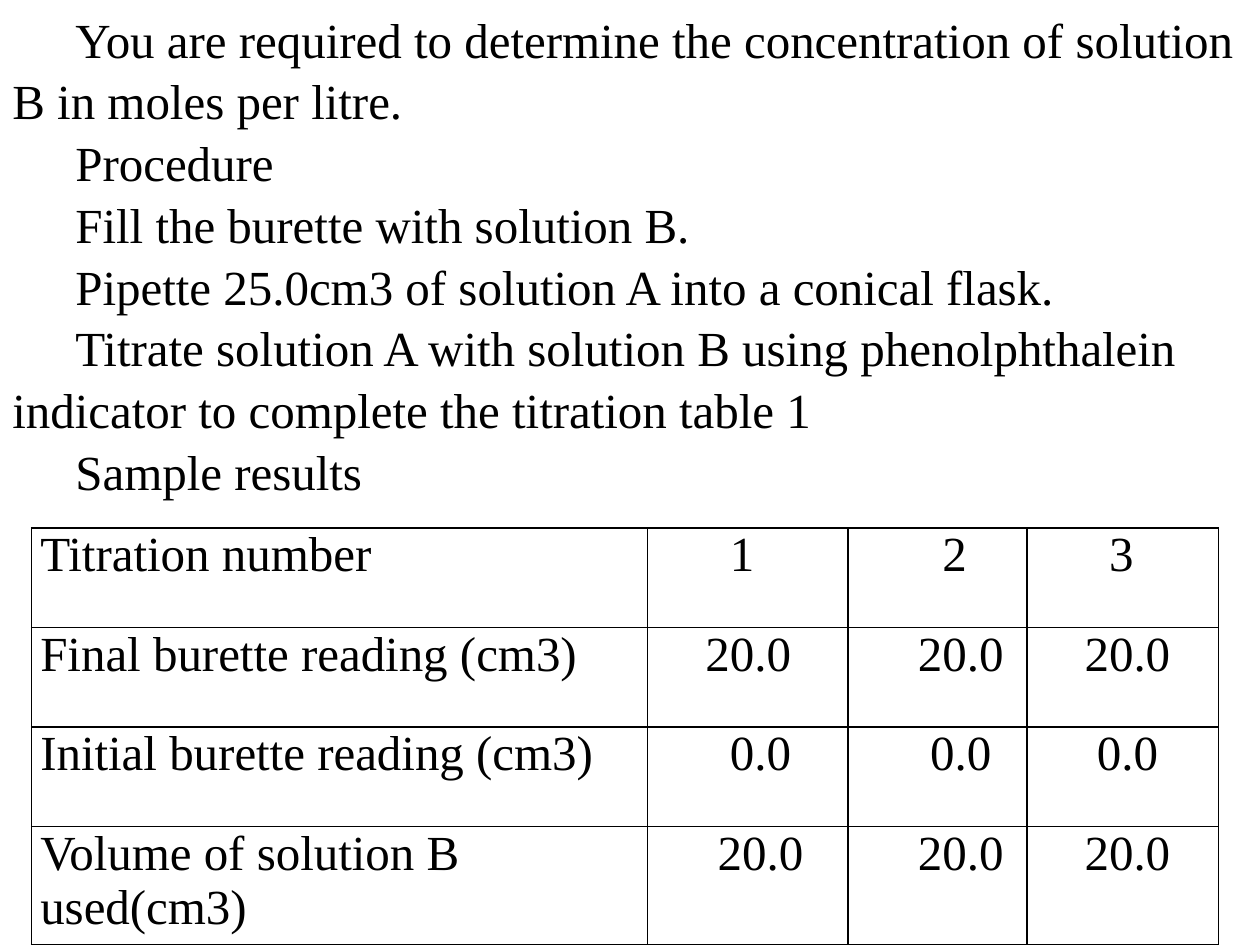
from pptx import Presentation, util as u
from pptx.dml.color import RGBColor
from pptx.enum import text
from pptx.oxml import parse_xml
from pptx.oxml.ns import nsdecls

BLACK = RGBColor(0, 0, 0)
WHITE = RGBColor(255, 255, 255)
FONT = {"name": "Times New Roman", "size": u.Pt(28), "bold": False}
SPACE = u.Pt(7)
CELL = {"margin_left": u.Inches(0.07), "margin_right": u.Inches(0.07),
        "margin_top": 0, "margin_bottom": 0,
        "vertical_anchor": text.MSO_ANCHOR.TOP}
BLANK_LAYOUT = 6
COLUMNS = (4.89, 1.59, 1.42, 1.52)
ROWS = (0.79, 0.79, 0.79, 0.94)
INSTRUCTIONS = (
    "You are required to determine the concentration of solution B in moles per litre.",
    "Procedure",
    "Fill the burette with solution B.",
    "Pipette 25.0cm3 of solution A into a conical flask.",
    "Titrate solution A with solution B using phenolphthalein indicator "
    "to complete the titration table 1",
    "Sample results",
)
READINGS = (
    ("Titration number", "1", "2", "3"),
    ("Final burette reading (cm3)", "20.0", "20.0", "20.0"),
    ("Initial burette reading (cm3)", "0.0", "0.0", "0.0"),
    ("Volume of solution B used(cm3)", "20.0", "20.0", "20.0"),
)
INDENTS = ((0, 6, 7, 6), (0, 4, 5, 4), (0, 6, 6, 5), (0, 5, 5, 4))


def apply(target, values):
    """Set each attribute of the target from a dict."""
    for name, value in values.items():
        setattr(target, name, value)


def write(paragraph, words, left=0, first=0):
    """Fill a paragraph with styled words and its indents."""
    properties = paragraph._p.get_or_add_pPr()
    properties.set("marL", str(int(left)))
    properties.set("indent", str(int(first)))
    run = paragraph.add_run()
    run.text = words
    apply(run.font, FONT)
    run.font.color.rgb = BLACK


def add_borders(cell):
    """Draw a thin black line on all four sides of a cell."""
    properties = cell._tc.get_or_add_tcPr()
    for position, side in enumerate(("lnL", "lnR", "lnT", "lnB")):
        properties.insert(position, parse_xml(
            f'<a:{side} {nsdecls("a")} w="{u.Pt(1)}"><a:solidFill>'
            f'<a:srgbClr val="{BLACK}"/></a:solidFill></a:{side}>'))


def add_instructions(slide, box):
    """Place the procedure text in the box."""
    frame = slide.shapes.add_textbox(*box).text_frame
    apply(frame, {"word_wrap": True, "vertical_anchor": text.MSO_ANCHOR.TOP})
    for number, words in enumerate(INSTRUCTIONS):
        paragraph = frame.add_paragraph() if number else frame.paragraphs[0]
        write(paragraph, words, first=u.Inches(0.5))
        paragraph.line_spacing = 1.05


def add_readings(slide, box):
    """Place the titration table in the box, sharing out its width and height."""
    left, top, width, height = box
    table = slide.shapes.add_table(len(ROWS), len(COLUMNS), *box).table
    apply(table, {"first_row": False, "horz_banding": False})
    for column, share in zip(table.columns, COLUMNS):
        column.width = int(width * share / sum(COLUMNS))
    for row, share in zip(table.rows, ROWS):
        row.height = int(height * share / sum(ROWS))
    for row, values, indents in zip(table.rows, READINGS, INDENTS):
        for cell, words, spaces in zip(row.cells, values, indents):
            apply(cell, CELL)
            cell.fill.solid()
            cell.fill.fore_color.rgb = WHITE
            add_borders(cell)
            write(cell.text_frame.paragraphs[0], words, left=spaces * SPACE)


def main():
    """Build and save the titration slide."""
    presentation = Presentation()
    apply(presentation, {"slide_width": u.Inches(10), "slide_height": u.Inches(7.5)})
    slide = presentation.slides.add_slide(presentation.slide_layouts[BLANK_LAYOUT])
    add_instructions(slide, [u.Inches(n) for n in (0, 0, 10, 4.34)])
    add_readings(slide, [u.Inches(n) for n in (0.25, 4.19, 9.42, 3.31)])
    presentation.save("out.pptx")


if __name__ == "__main__":
    main()
